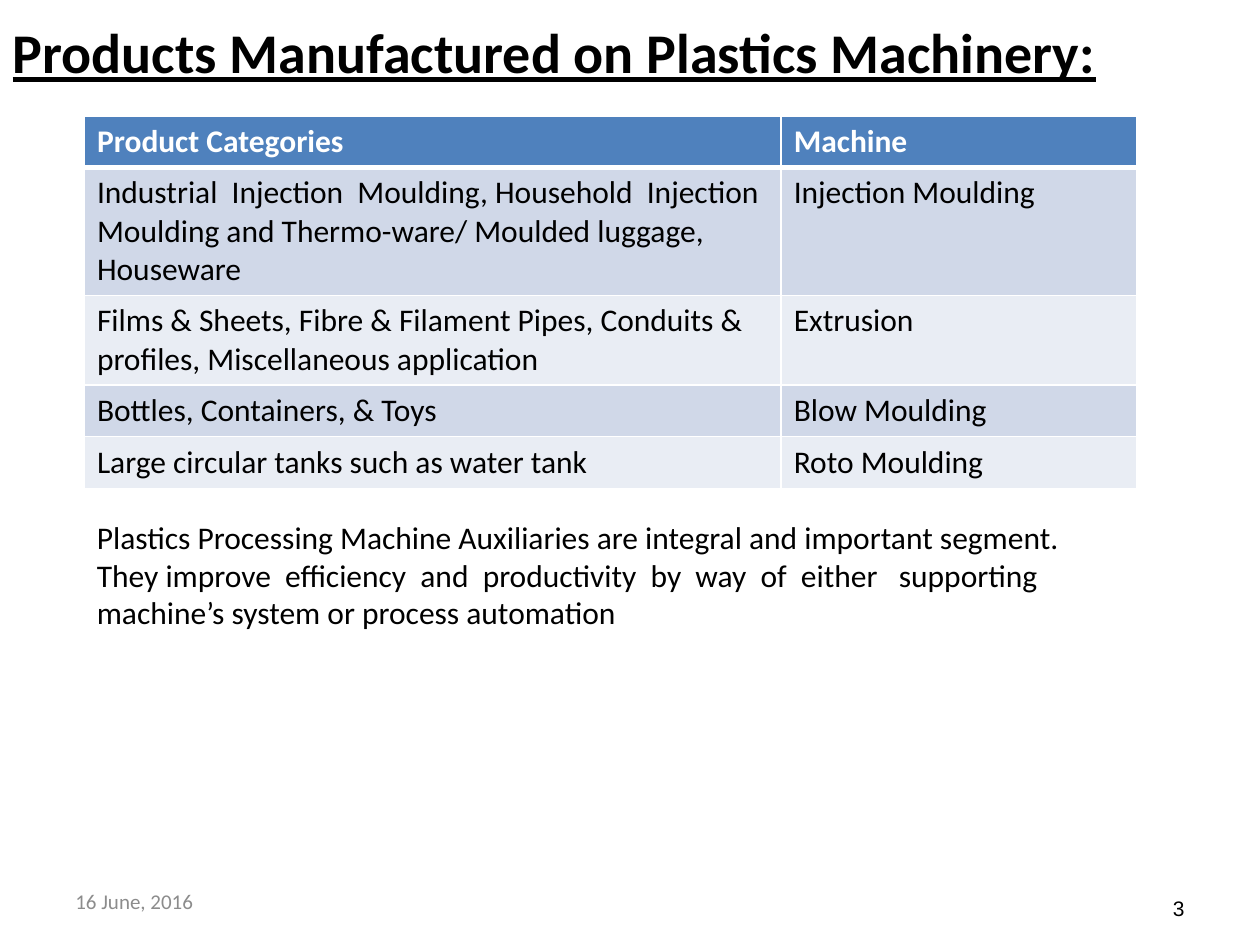
from dataclasses import dataclass

import pptx
import pptx.dml.color
import pptx.enum.text
import pptx.oxml.ns
import pptx.util
from lxml import etree
from pptx.util import Inches

ANCHOR = pptx.enum.text.MSO_ANCHOR
ALIGN = pptx.enum.text.PP_ALIGN


@dataclass(frozen=True)
class Theme:
    font: str = "Calibri"
    number_font: str = "Arial"
    black: str = "000000"
    white: str = "FFFFFF"
    grey: str = "8C8C8C"
    header: str = "4F81BD"
    bands: tuple = ("D0D8E8", "E9EDF4")
    title_size: int = 32
    body_size: int = 18
    footer_size: int = 12


THEME = Theme()

COLUMN_WIDTHS = (5.53, 2.82)
ROWS = [
    (["Product Categories"], ["Machine"]),
    (["Industrial  Injection  Moulding, Household  Injection",
      "Moulding and Thermo-ware/ Moulded luggage, Houseware"],
     ["Injection Moulding"]),
    (["Films & Sheets, Fibre & Filament Pipes, Conduits &",
      "profiles, Miscellaneous application"],
     ["Extrusion"]),
    (["Bottles, Containers, & Toys"], ["Blow Moulding"]),
    (["Large circular tanks such as water tank"], ["Roto Moulding"]),
]
AUXILIARIES = (
    "Plastics Processing Machine Auxiliaries are integral and important "
    "segment.  They improve  efficiency  and  productivity  by  way  of  "
    "either   supporting   machine’s system or process automation"
)


def rgb(color):
    return pptx.dml.color.RGBColor.from_string(color)


def write(tf, lines, size, color=THEME.black, font=THEME.font, bold=False,
          underline=False, align=ALIGN.LEFT):
    """Fill a text frame with one paragraph per line."""
    for i, line in enumerate(lines):
        p = tf.add_paragraph() if i else tf.paragraphs[0]
        p.alignment = align
        r = p.add_run()
        r.text = line
        r.font.name = font
        r.font.size = pptx.util.Pt(size)
        r.font.bold = bold
        r.font.underline = underline
        r.font.color.rgb = rgb(color)


def add_title(s, text):
    sp = s.shapes.title
    sp.left, sp.top = Inches(0), Inches(0.09)
    sp.width, sp.height = Inches(10), Inches(0.75)
    tf = sp.text_frame
    tf.vertical_anchor = ANCHOR.TOP
    tf.auto_size = pptx.enum.text.MSO_AUTO_SIZE.NONE
    write(tf, [text], THEME.title_size, bold=True, underline=True)


def add_text(s, text, left, top, width, height, size, anchor=ANCHOR.TOP, **style):
    sp = s.shapes.add_textbox(Inches(left), Inches(top), Inches(width), Inches(height))
    tf = sp.text_frame
    tf.word_wrap = True
    tf.vertical_anchor = anchor
    write(tf, [text], size, **style)


def add_borders(cell, **widths):
    """Draw white cell borders; widths in points are keyed L, R, T, B."""
    tc_pr = cell._tc.get_or_add_tcPr()
    qn = pptx.oxml.ns.qn
    for side, width in widths.items():
        ln = etree.SubElement(tc_pr, qn(f"a:ln{side}"), w=str(pptx.util.Pt(width)))
        fill = etree.SubElement(ln, qn("a:solidFill"))
        etree.SubElement(fill, qn("a:srgbClr"), val=THEME.white)


def add_product_table(s):
    frame = s.shapes.add_table(len(ROWS), len(COLUMN_WIDTHS), Inches(0.67),
                               Inches(0.92), Inches(sum(COLUMN_WIDTHS)), Inches(2.92))
    table = frame.table
    for column, width in zip(table.columns, COLUMN_WIDTHS):
        column.width = Inches(width)
    for i, texts in enumerate(ROWS):
        table.rows[i].height = Inches(0.41)
        header = i == 0
        fill = THEME.header if header else THEME.bands[(i - 1) % 2]
        for cell, lines in zip(table.rows[i].cells, texts):
            add_borders(cell, L=1, R=1, T=3 if i == 1 else 1, B=3 if header else 1)
            cell.fill.solid()
            cell.fill.fore_color.rgb = rgb(fill)
            write(cell.text_frame, lines, THEME.body_size, bold=header,
                  color=THEME.white if header else THEME.black)


def main():
    prs = pptx.Presentation()
    prs.slide_width, prs.slide_height = Inches(10), Inches(7.5)
    s = prs.slides.add_slide(prs.slide_layouts[5])
    add_title(s, "Products Manufactured on Plastics Machinery:")
    add_product_table(s)
    add_text(s, AUXILIARIES, 0.67, 4.06, 8.35, 1.01, THEME.body_size)
    add_text(s, "16 June, 2016", 0.5, 6.95, 2.33, 0.4, THEME.footer_size,
             ANCHOR.MIDDLE, color=THEME.grey)
    add_text(s, "3", 7.17, 7.08, 2.33, 0.25, THEME.footer_size, ANCHOR.MIDDLE,
             font=THEME.number_font, align=ALIGN.RIGHT)
    prs.save("out.pptx")


if __name__ == "__main__":
    main()
